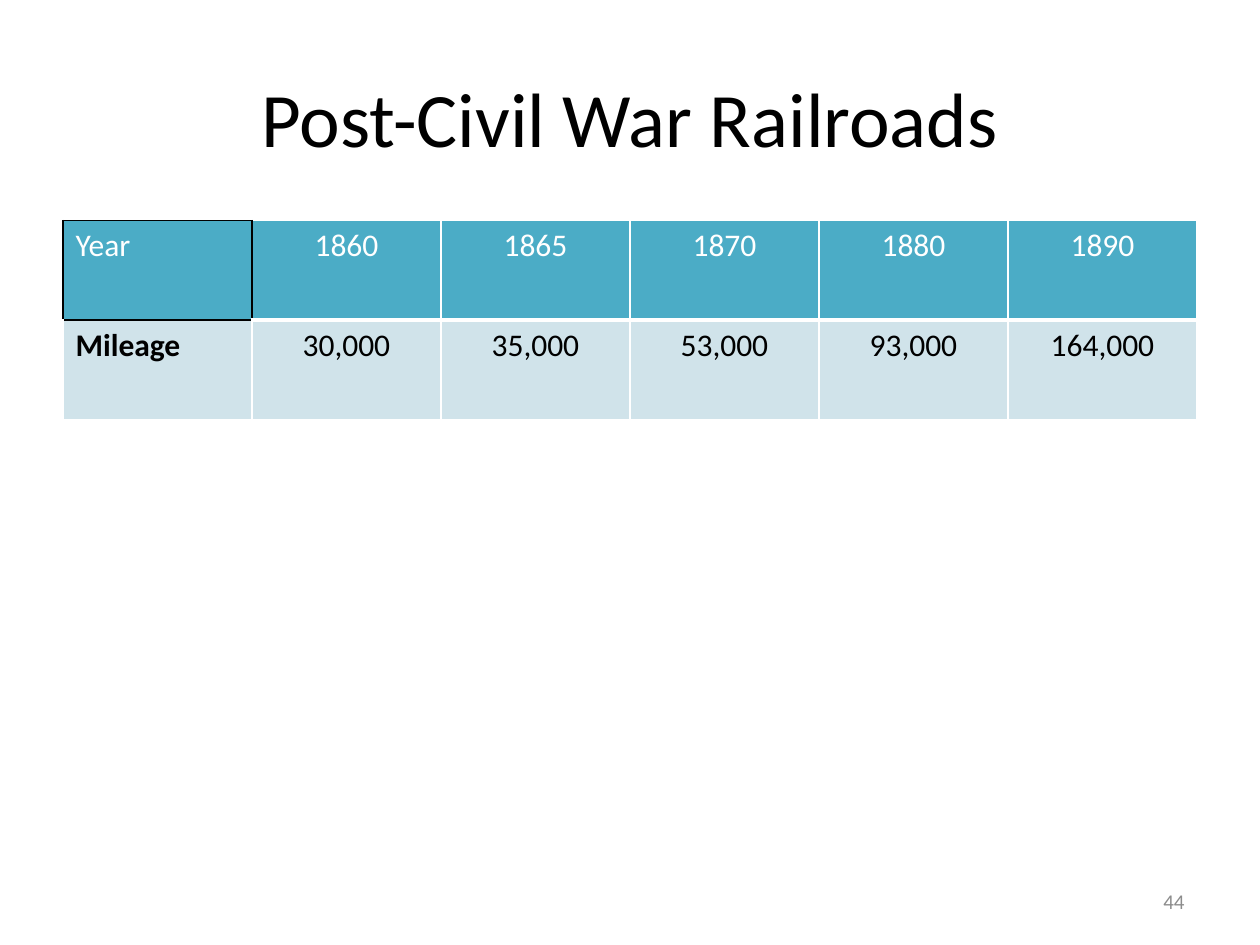
from lxml import etree
from pptx import Presentation
from pptx.dml.color import RGBColor
from pptx.enum import text
from pptx.oxml.ns import qn
from pptx.util import Inches, Pt

AL = text.PP_ALIGN
MID = text.MSO_ANCHOR.MIDDLE


def color(code):
    return RGBColor.from_string(code)


def write(frame, words, size, code, align, bold=False):
    para = frame.paragraphs[0]
    para.alignment = align
    run = para.add_run()
    run.text = words
    form = {"name": "Calibri", "size": Pt(size), "bold": bold}
    for key, val in form.items():
        setattr(run.font, key, val)
    run.font.color.rgb = color(code)


deck = Presentation()
deck.slide_width, deck.slide_height = Inches(10), Inches(7.5)
slide = deck.slides.add_slide(deck.slide_layouts[5])

title = slide.shapes.title
place = {"left": 0.5, "top": 0.3, "width": 9, "height": 1.25}
for key, val in place.items():
    setattr(title, key, Inches(val))
title.text_frame.vertical_anchor = MID
write(title.text_frame, "Post-Civil War Railroads", 44, "000000", AL.CENTER)

rows = [
    ["Year", "1860", "1865", "1870", "1880", "1890"],
    ["Mileage", "30,000", "35,000", "53,000", "93,000", "164,000"],
]
fills = ["4BACC6", "D0E3EA"]
inks = ["FFFFFF", "000000"]
table = slide.shapes.add_table(
    2, 6, Inches(0.5), Inches(1.75), Inches(9), Inches(1.58)
).table

for r, row in enumerate(rows):
    for c, words in enumerate(row):
        cell = table.cell(r, c)
        align = AL.CENTER if c else AL.LEFT
        write(cell.text_frame, words, 18, inks[r], align, (r, c) == (1, 0))

        edges = {side: ("FFFFFF", 1) for side in "LRTB"}
        if (r, c) == (0, 0):
            edges = {side: ("000000", 1) for side in "LRTB"}
        elif r == 0:
            edges["B"] = ("FFFFFF", 3)
            if c == 1:
                edges["L"] = ("000000", 1)
        elif c == 0:
            edges["T"] = ("000000", 1)
        props = cell._tc.get_or_add_tcPr()
        for side, (code, width) in edges.items():
            line = etree.SubElement(props, qn("a:ln" + side), w=str(Pt(width)))
            solid = etree.SubElement(line, qn("a:solidFill"))
            etree.SubElement(solid, qn("a:srgbClr"), val=code)
        cell.fill.solid()
        cell.fill.fore_color.rgb = color(fills[r])

page = slide.shapes.add_textbox(
    Inches(7.17), Inches(6.95), Inches(2.33), Inches(0.4)
).text_frame
page.word_wrap = True
page.vertical_anchor = MID
write(page, "44", 12, "8C8C8C", AL.RIGHT)

deck.save("out.pptx")
